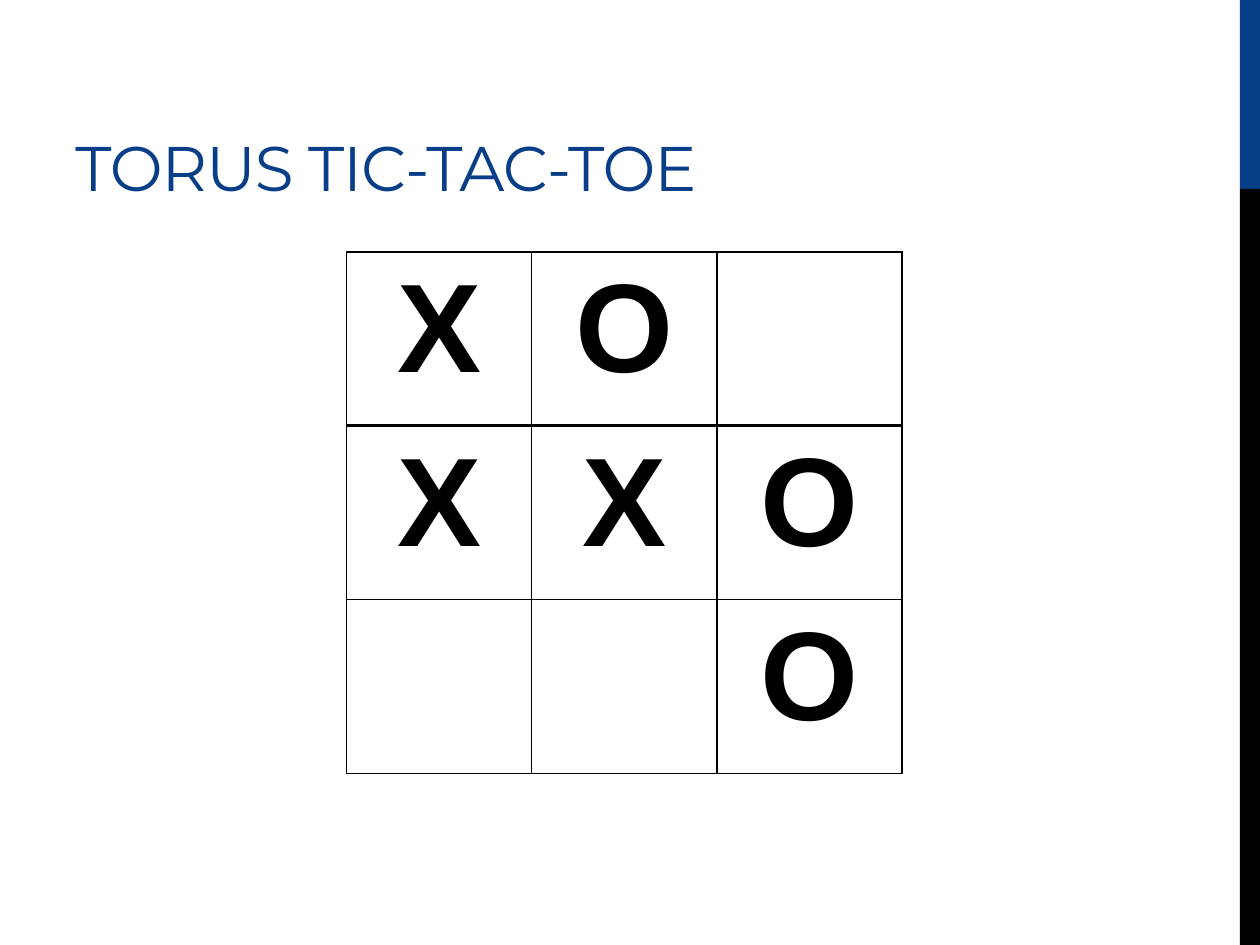
"""Build the torus tic-tac-toe slide: a title, a side bar and a marked board."""
from dataclasses import dataclass

from lxml.etree import SubElement
from pptx import Presentation
from pptx.dml.color import RGBColor
from pptx.enum.shapes import MSO_SHAPE
from pptx.enum.text import MSO_ANCHOR, PP_ALIGN
from pptx.oxml.ns import qn
from pptx.util import Inches, Pt

TITLE = "TORUS TIC-TAC-TOE"
BOARD = [
    ["X", "O", ""],
    ["X", "X", "O"],
    ["", "", "O"],
]


@dataclass(frozen=True)
class Theme:
    blue: str = "073E87"
    black: str = "000000"
    white: str = "FFFFFF"
    title_font: str = "Montserrat"
    mark_font: str = "Arial"
    title_size: int = 36
    mark_size: int = 72
    title_spacing: int = -60
    thin: int = 1
    thick: int = 2


THEME = Theme()
WIDTH, HEIGHT = 10, 7.5
BAR_WIDTH = 0.16
BAR_SHARES = [(THEME.blue, 0.2), (THEME.black, 0.8)]
TITLE_BOX = (0.5, 0.17, 6.33, 1.5)
BOARD_LEFT, BOARD_TOP = 2.75, 2
CELL_WIDTH, CELL_HEIGHT = 1.47, 1.38


def inches(*lengths):
    return [Inches(length) for length in lengths]


def add_span(para, text, font, size, color, bold=False):
    span = para.add_run()
    span.text = text
    span.font.name = font
    span.font.size = Pt(size)
    span.font.bold = bold
    span.font.color.rgb = RGBColor.from_string(color)
    return span


def add_side_bar(page):
    top = 0
    for color, share in BAR_SHARES:
        height = HEIGHT * share
        bar = page.shapes.add_shape(
            MSO_SHAPE.RECTANGLE, *inches(WIDTH - BAR_WIDTH, top, BAR_WIDTH, height))
        bar.shadow.inherit = False
        bar.fill.solid()
        bar.fill.fore_color.rgb = RGBColor.from_string(color)
        bar.line.fill.background()
        top += height


def add_title(page):
    box = page.shapes.add_textbox(*inches(*TITLE_BOX))
    frame = box.text_frame
    frame.word_wrap = True
    frame.vertical_anchor = MSO_ANCHOR.BOTTOM
    span = add_span(frame.paragraphs[0], TITLE, THEME.title_font, THEME.title_size, THEME.blue)
    span.font._element.set("spc", str(THEME.title_spacing))


def set_borders(cell, widths):
    properties = cell._tc.get_or_add_tcPr()
    for position, (side, width) in enumerate(widths.items()):
        line = SubElement(properties, qn(f"a:ln{side}"), w=str(Pt(width)))
        fill = SubElement(line, qn("a:solidFill"))
        SubElement(fill, qn("a:srgbClr"), val=THEME.black)
        properties.insert(position, line)


def add_board(page):
    rows, columns = len(BOARD), len(BOARD[0])
    frame = page.shapes.add_table(rows, columns, *inches(
        BOARD_LEFT, BOARD_TOP, columns * CELL_WIDTH, rows * CELL_HEIGHT))
    table = frame.table
    table.first_row = table.horz_banding = False
    for row, marks in enumerate(BOARD):
        for column, mark in enumerate(marks):
            cell = table.cell(row, column)
            cell.fill.solid()
            cell.fill.fore_color.rgb = RGBColor.from_string(THEME.white)
            set_borders(cell, {
                "L": THEME.thin,
                "R": THEME.thin,
                "T": THEME.thick if row == 1 else THEME.thin,
                "B": THEME.thick if row == 0 else THEME.thin,
            })
            if mark:
                para = cell.text_frame.paragraphs[0]
                para.alignment = PP_ALIGN.CENTER
                add_span(para, mark, THEME.mark_font, THEME.mark_size, THEME.black, bold=True)


def main():
    deck = Presentation()
    deck.slide_width, deck.slide_height = inches(WIDTH, HEIGHT)
    page = deck.slides.add_slide(deck.slide_layouts[6])
    add_side_bar(page)
    add_board(page)
    add_title(page)
    deck.save("out.pptx")


if __name__ == "__main__":
    main()
